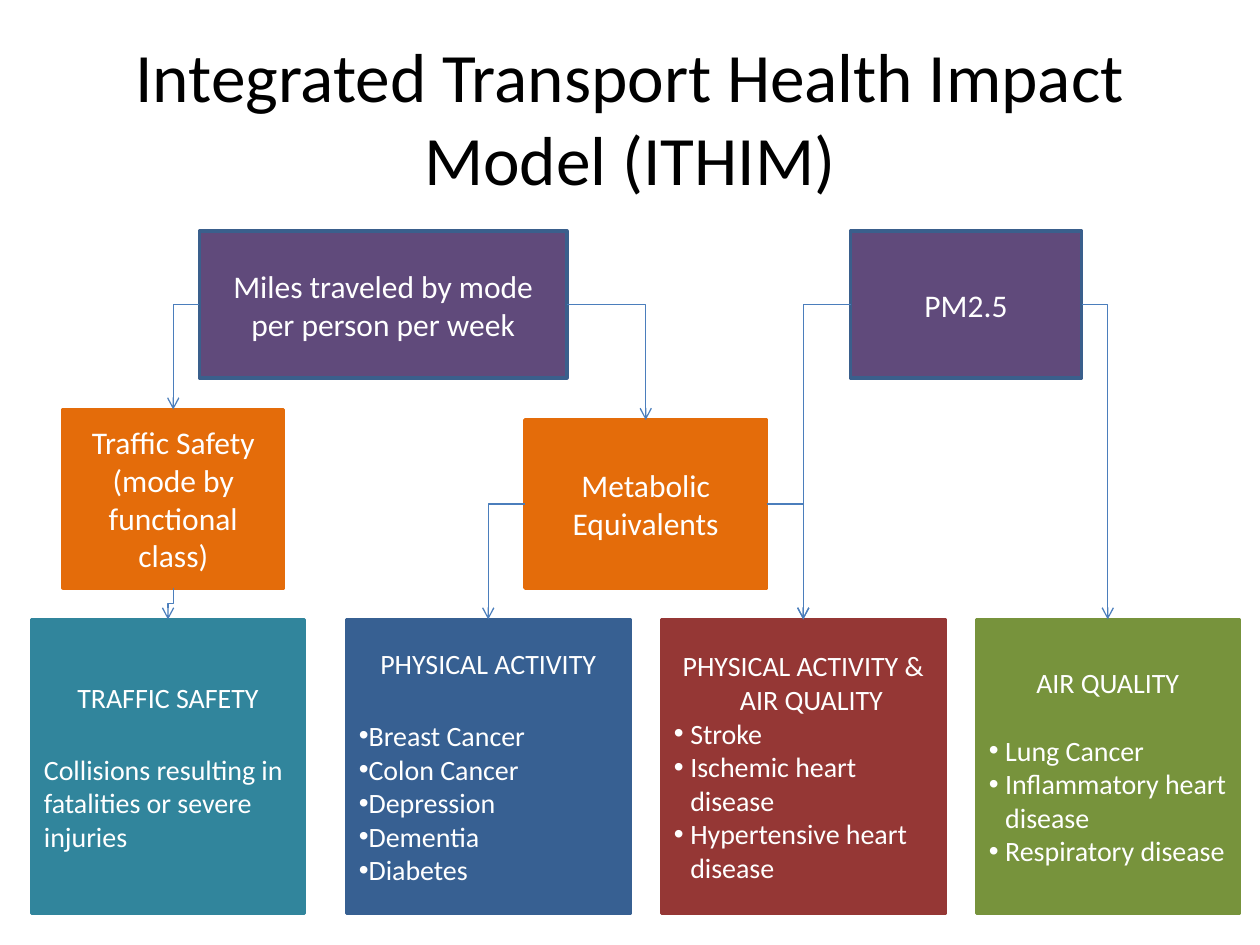
import pptx
import pptx.util
from pptx.dml.color import RGBColor
from pptx.enum.shapes import MSO_CONNECTOR, MSO_SHAPE
from pptx.enum.text import MSO_ANCHOR, MSO_AUTO_SIZE, PP_ALIGN
from pptx.oxml.ns import qn
import lxml.etree

# Grid: 12 cells to the inch, 120 columns by 90 rows
CELL = pptx.util.Inches(1) / 12
COLUMNS, ROWS = 120, 90
OUTCOME_ROW, OUTCOME_ROWS = 59, 28
HANGING = 0.13
TOP, LEFT, BOTTOM, RIGHT = range(4)  # connection sites of a rectangle

BLACK = RGBColor(0x00, 0x00, 0x00)
WHITE = RGBColor(0xFF, 0xFF, 0xFF)
PURPLE = RGBColor(0x60, 0x4A, 0x7B)
NAVY = RGBColor(0x3A, 0x5F, 0x8C)
ORANGE = RGBColor(0xE4, 0x6C, 0x0A)
TEAL = RGBColor(0x31, 0x85, 0x9C)
BLUE = RGBColor(0x37, 0x60, 0x92)
RED = RGBColor(0x95, 0x37, 0x35)
GREEN = RGBColor(0x77, 0x93, 0x3C)
ARROW_BLUE = RGBColor(0x4B, 0x7E, 0xBC)


def cells(count):
    return pptx.util.Emu(round(count * CELL))


def add_child(parent, tag, **attributes):
    return lxml.etree.SubElement(parent, qn(tag), attributes)


def write(para, text, size=18, color=WHITE, align=PP_ALIGN.CENTER,
          before=0, indent=0, bullet=False):
    """Write one formatted paragraph; indent is a hanging indent in inches."""
    para.alignment = align
    para.space_before = pptx.util.Pt(before)
    span = para.add_run()
    span.text = text
    span.font.name = "Calibri"
    span.font.size = pptx.util.Pt(size)
    span.font.color.rgb = color
    properties = para._p.get_or_add_pPr()
    hang = pptx.util.Inches(indent)
    properties.set("marL", str(hang))
    properties.set("indent", str(-hang))
    if bullet:
        add_child(properties, "a:buFont", typeface="Arial")
        add_child(properties, "a:buChar", char="•")


def add_box(page, left, top, width, height, fill, text, line=None, **style):
    box = page.shapes.add_shape(MSO_SHAPE.RECTANGLE, cells(left), cells(top),
                                cells(width), cells(height))
    box.shadow.inherit = False
    box.fill.solid()
    box.fill.fore_color.rgb = fill
    box.line.color.rgb = line or fill
    box.line.width = pptx.util.Pt(2)
    box.text_frame.word_wrap = True
    box.text_frame.vertical_anchor = MSO_ANCHOR.MIDDLE
    write(box.text_frame.paragraphs[0], text, **style)
    return box


def add_outcome(page, left, width, fill, heading, items, gap=0, indent=0,
                heading_indent=0, bullet=True):
    """Add a bottom-row box: a heading, a gap in points, then the items."""
    box = add_box(page, left, OUTCOME_ROW, width, OUTCOME_ROWS, fill, heading,
                  size=16, indent=heading_indent)
    for number, item in enumerate(items):
        write(box.text_frame.add_paragraph(), item, size=16,
              align=PP_ALIGN.LEFT, before=0 if number else gap,
              indent=indent, bullet=bullet)
    return box


def add_arrow(page, source, site, target):
    """Link a side or the bottom of one box to the top of another."""
    arrow = page.shapes.add_connector(MSO_CONNECTOR.ELBOW, 0, 0, 0, 0)
    arrow.begin_connect(source, site)
    arrow.end_connect(target, TOP)
    arrow.line.color.rgb = ARROW_BLUE
    arrow.line.width = pptx.util.Pt(0.75)
    properties = arrow._element.spPr
    add_child(properties.find(qn("a:ln")), "a:tailEnd", type="arrow")
    add_child(properties, "a:effectLst")
    if site == BOTTOM:
        turn_down(arrow)
    else:
        properties.find(qn("a:prstGeom")).set("prst", "bentConnector2")


def turn_down(arrow):
    """Turn a three-part elbow so it runs down, across to the left and down."""
    across, down = arrow.width, arrow.height
    center_x, center_y = arrow.left + across // 2, arrow.top + down // 2
    arrow.width, arrow.height = down, across
    arrow.left, arrow.top = center_x - down // 2, center_y - across // 2
    frame = arrow._element.spPr.find(qn("a:xfrm"))
    frame.attrib.pop("flipH", None)
    frame.set("rot", "5400000")


def add_title(page, text):
    title = page.shapes.title
    title.left, title.top = cells(6), cells(3.6)
    title.width, title.height = cells(108), cells(15)
    title.text_frame.auto_size = MSO_AUTO_SIZE.NONE
    title.text_frame.word_wrap = True
    title.text_frame.vertical_anchor = MSO_ANCHOR.MIDDLE
    write(title.text_frame.paragraphs[0], text, size=39.6, color=BLACK)


def main():
    deck = pptx.Presentation()
    deck.slide_width, deck.slide_height = cells(COLUMNS), cells(ROWS)
    page = deck.slides.add_slide(deck.slide_layouts[5])
    add_title(page, "Integrated Transport Health Impact Model (ITHIM)")

    # Model inputs
    miles = add_box(page, 19, 22, 35, 14, PURPLE,
                    "Miles traveled by mode per person per week", line=NAVY)
    particles = add_box(page, 81, 22, 22, 14, PURPLE, "PM2.5", line=NAVY)

    # Intermediate measures
    safety = add_box(page, 6, 39, 21, 17, ORANGE,
                     "Traffic Safety (mode by functional class)")
    metabolic = add_box(page, 50, 40, 23, 16, ORANGE, "Metabolic Equivalents")

    # Health outcomes
    collisions = add_outcome(
        page, 3, 26, TEAL, "TRAFFIC SAFETY",
        ["Collisions resulting in fatalities or severe injuries"],
        gap=22, bullet=False)
    activity = add_outcome(
        page, 33, 27, BLUE, "PHYSICAL ACTIVITY",
        ["Breast Cancer", "Colon Cancer", "Depression", "Dementia",
         "Diabetes"], gap=22)
    combined = add_outcome(
        page, 63, 27, RED, "PHYSICAL ACTIVITY & AIR QUALITY",
        ["Stroke", "Ischemic heart disease", "Hypertensive heart disease"],
        indent=HANGING, heading_indent=HANGING)
    air = add_outcome(
        page, 93, 25, GREEN, "AIR QUALITY",
        ["Lung Cancer", "Inflammatory heart disease", "Respiratory disease"],
        gap=19.5, indent=HANGING)

    # Flow from inputs to outcomes
    for source, site, target in (
            (miles, RIGHT, metabolic), (miles, LEFT, safety),
            (safety, BOTTOM, collisions), (metabolic, LEFT, activity),
            (metabolic, RIGHT, combined), (particles, LEFT, combined),
            (particles, RIGHT, air)):
        add_arrow(page, source, site, target)

    deck.save("out.pptx")


if __name__ == "__main__":
    main()
